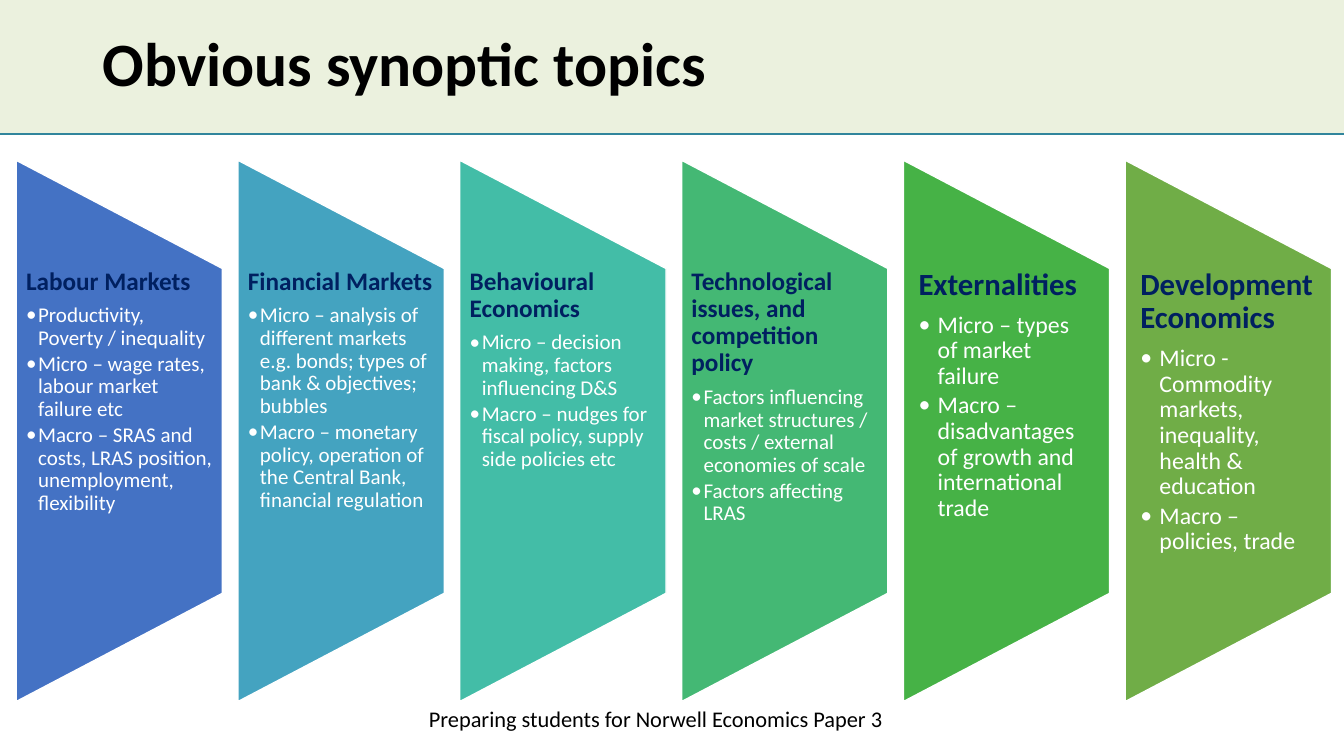
from dataclasses import dataclass

from lxml.etree import SubElement
from pptx import Presentation
from pptx.dml.color import RGBColor
from pptx.enum.shapes import MSO_CONNECTOR, MSO_SHAPE
from pptx.enum.text import MSO_ANCHOR, MSO_AUTO_SIZE, PP_ALIGN
from pptx.oxml.ns import qn
from pptx.util import Inches, Pt


@dataclass(frozen=True)
class Theme:
    font: str = "Calibri"
    band: str = "EBF1DE"
    rule: str = "31859C"
    ink: str = "000000"
    heading: str = "002060"
    white: str = "FFFFFF"
    title_size: int = 44
    footer_size: int = 16


@dataclass(frozen=True)
class PanelStyle:
    heading_size: int
    bullet_size: int
    inset: float
    indent: float


THEME = Theme()
COMPACT = PanelStyle(18, 15, 0.1, 0.12)
LARGE = PanelStyle(22, 17, 0.15, 0.19)
W, H = Inches(13.33), Inches(7.5)

TOPICS = [
    ("Labour Markets", "4472C4", COMPACT, [
        "Productivity, Poverty / inequality",
        "Micro – wage rates, labour market failure etc",
        "Macro – SRAS and costs, LRAS position, unemployment, flexibility"]),
    ("Financial Markets", "44A3C0", COMPACT, [
        "Micro – analysis of different markets e.g. bonds; types of bank & objectives; bubbles",
        "Macro – monetary policy, operation of the Central Bank, financial regulation"]),
    ("Behavioural Economics", "43BDA7", COMPACT, [
        "Micro – decision making, factors influencing D&S",
        "Macro – nudges for fiscal policy, supply side policies etc"]),
    ("Technological issues, and competition policy", "44B874", COMPACT, [
        "Factors influencing market structures / costs / external economies of scale",
        "Factors affecting LRAS"]),
    ("Externalities", "46B246", LARGE, [
        "Micro – types of market failure",
        "Macro – disadvantages of growth and international trade"]),
    ("Development Economics", "70AD47", LARGE, [
        "Micro - Commodity markets, inequality, health & education",
        "Macro – policies, trade"]),
]


def set_attrs(obj, values):
    for name, value in values.items():
        setattr(obj, name, value)


def add_run(p, text, size, color, bold=False):
    r = p.add_run()
    r.text = text
    set_attrs(r.font, {"name": THEME.font, "size": Pt(size), "bold": bold})
    r.font.color.rgb = RGBColor.from_string(color)


def set_frame(tf, inset=0.1, anchor=MSO_ANCHOR.TOP):
    set_attrs(tf, {
        "word_wrap": True, "auto_size": MSO_AUTO_SIZE.NONE, "vertical_anchor": anchor,
        "margin_left": Inches(inset), "margin_right": Inches(inset),
        "margin_top": 0, "margin_bottom": 0})


def paint(sp, fill):
    sp.shadow.inherit = False
    sp.fill.solid()
    sp.fill.fore_color.rgb = RGBColor.from_string(fill)


def add_bullet(p, indent):
    pPr = p._p.get_or_add_pPr()
    pPr.set("marL", str(Inches(indent)))
    pPr.set("indent", str(-Inches(indent)))
    SubElement(pPr, qn("a:buFont")).set("typeface", THEME.font)
    SubElement(pPr, qn("a:buChar")).set("char", "•")


def add_header(slide, text, height):
    title = slide.shapes.title
    band = slide.shapes.add_shape(MSO_SHAPE.RECTANGLE, 0, 0, W, height)
    paint(band, THEME.band)
    band.line.fill.background()
    rule = slide.shapes.add_connector(MSO_CONNECTOR.STRAIGHT, 0, height, W, height)
    rule.line.color.rgb = RGBColor.from_string(THEME.rule)
    rule.line.width = Pt(1.75)
    SubElement(rule.element.spPr, qn("a:effectLst"))
    for sp in (band, rule):
        title.element.addprevious(sp.element)

    set_attrs(title, {"left": Inches(0.92), "top": Inches(0.1),
                      "width": Inches(11.5), "height": Inches(1.12)})
    set_frame(title.text_frame, anchor=MSO_ANCHOR.MIDDLE)
    p = title.text_frame.paragraphs[0]
    set_attrs(p, {"alignment": PP_ALIGN.LEFT, "line_spacing": 0.9})
    add_run(p, text, THEME.title_size, THEME.ink, bold=True)


def add_panel(slide, box, heading, fill, style, bullets):
    """Place a trapezoid with its long side on the left, and the topic text over it."""
    x, y, w, h = box
    sp = slide.shapes.add_shape(MSO_SHAPE.FLOWCHART_MANUAL_OPERATION,
                                x + (w - h) // 2, y + (h - w) // 2, h, w)
    sp.rotation = 270
    paint(sp, fill)
    sp.line.color.rgb = RGBColor.from_string(THEME.white)
    sp.line.width = Pt(1)

    tf = slide.shapes.add_textbox(x, y + int(h * 0.2), w, int(h * 0.6)).text_frame
    set_frame(tf, style.inset)
    p = tf.paragraphs[0]
    set_attrs(p, {"line_spacing": 0.9, "space_after": Pt(style.heading_size * 0.35)})
    add_run(p, heading, style.heading_size, THEME.heading, bold=True)
    for text in bullets:
        p = tf.add_paragraph()
        set_attrs(p, {"level": 1, "line_spacing": 0.9,
                      "space_after": Pt(style.bullet_size * 0.15)})
        add_bullet(p, style.indent)
        add_run(p, text, style.bullet_size, THEME.white)


def add_panels(slide, box, topics):
    x, y, w, h = box
    pitch = w / len(topics)
    for i, topic in enumerate(topics):
        add_panel(slide, (int(x + i * pitch), y, int(pitch * 0.93), h), *topic)


def add_footer(slide, box, text):
    tf = slide.shapes.add_textbox(*box).text_frame
    set_frame(tf, anchor=MSO_ANCHOR.MIDDLE)
    p = tf.paragraphs[0]
    p.alignment = PP_ALIGN.CENTER
    add_run(p, text, THEME.footer_size, THEME.ink)


def main():
    prs = Presentation()
    set_attrs(prs, {"slide_width": W, "slide_height": H})
    slide = prs.slides.add_slide(prs.slide_layouts[5])
    add_header(slide, "Obvious synoptic topics", Inches(1.33))
    add_panels(slide, (Inches(0.16), Inches(1.59), Inches(13.2), Inches(5.37)), TOPICS)
    add_footer(slide, (Inches(4.09), Inches(6.95), Inches(4.83), Inches(0.35)),
               "Preparing students for Norwell Economics Paper 3")
    prs.save("out.pptx")


if __name__ == "__main__":
    main()
